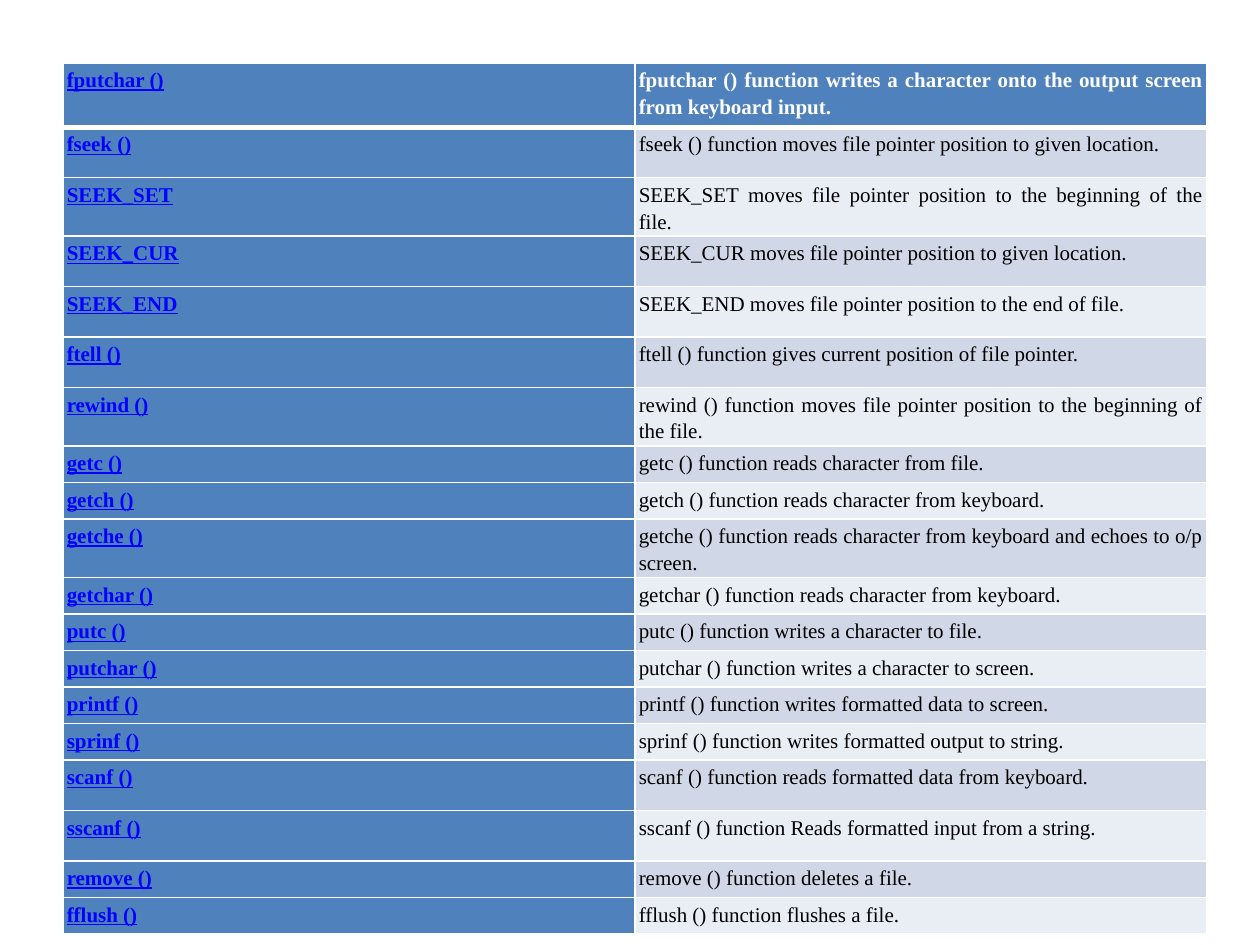
from typing import NamedTuple

from lxml.etree import SubElement
from pptx import Presentation
from pptx.dml.color import RGBColor
from pptx.enum.text import PP_ALIGN as Align
from pptx.oxml.ns import qn
from pptx.util import Pt

PX = 914400 // 200
FONT = "Times New Roman"
WHITE = RGBColor(0xFF, 0xFF, 0xFF)
BLACK = RGBColor(0x00, 0x00, 0x00)
LINK = RGBColor(0x00, 0x00, 0xFF)
BLUE = RGBColor(0x4F, 0x81, 0xBD)
BANDS = (RGBColor(0xE9, 0xED, 0xF4), RGBColor(0xD0, 0xD8, 0xE8))

LEFT, TOP, COL_W = 100, 100, 908
HEAD, TALL, SHORT = 102, 80, 58
INSET_X, INSET_Y = 6, 4


class Entry(NamedTuple):
    name: str
    text: str
    height: int = SHORT


ENTRIES = [
    Entry("fputchar ()", "fputchar () function writes a character onto the output screen from keyboard input.", HEAD),
    Entry("fseek ()", "fseek () function moves file pointer position to given location.", TALL),
    Entry("SEEK_SET", "SEEK_SET moves file pointer position to the beginning of the file.", TALL),
    Entry("SEEK_CUR", "SEEK_CUR moves file pointer position to given location.", TALL),
    Entry("SEEK_END", "SEEK_END moves file pointer position to the end of file.", TALL),
    Entry("ftell ()", "ftell () function gives current position of file pointer.", TALL),
    Entry("rewind ()", "rewind () function moves file pointer position to the beginning of the file.", TALL),
    Entry("getc ()", "getc () function reads character from file."),
    Entry("getch ()", "getch () function reads character from keyboard."),
    Entry("getche ()", "getche () function reads character from keyboard and echoes to o/p screen.", TALL),
    Entry("getchar ()", "getchar () function reads character from keyboard."),
    Entry("putc ()", "putc () function writes a character to file."),
    Entry("putchar ()", "putchar () function writes a character to screen."),
    Entry("printf ()", "printf () function writes formatted data to screen."),
    Entry("sprinf ()", "sprinf () function writes formatted output to string."),
    Entry("scanf ()", "scanf () function reads formatted data from keyboard.", TALL),
    Entry("sscanf ()", "sscanf () function Reads formatted input from a string.", TALL),
    Entry("remove ()", "remove () function deletes a file."),
    Entry("fflush ()", "fflush () function flushes a file."),
]


def set_borders(cell, top: int = 1, bottom: int = 1) -> None:
    tc_pr = cell._tc.get_or_add_tcPr()
    for side, width in (("L", 1), ("R", 1), ("T", top), ("B", bottom)):
        ln = SubElement(tc_pr, qn(f"a:ln{side}"), w=str(Pt(width)))
        fill = SubElement(ln, qn("a:solidFill"))
        SubElement(fill, qn("a:srgbClr"), val=str(WHITE))


def write(cell, text: str, *, color: RGBColor, bold: bool = False,
          underline: bool = False, align: Align = Align.LEFT) -> None:
    p = cell.text_frame.paragraphs[0]
    p.alignment = align
    p.line_spacing = 1.15
    r = p.add_run()
    r.text = text
    r.font.name = FONT
    r.font.size = Pt(12)
    r.font.bold = bold
    r.font.underline = underline
    r.font.color.rgb = color


def format_cell(cell, fill: RGBColor, row: int) -> None:
    cell.margin_left = cell.margin_right = INSET_X * PX
    cell.margin_top = cell.margin_bottom = INSET_Y * PX
    set_borders(cell, top=3 if row == 1 else 1, bottom=3 if row == 0 else 1)
    cell.fill.solid()
    cell.fill.fore_color.rgb = fill


def add_function_table(s, entries: list[Entry]) -> None:
    height = sum(e.height for e in entries)
    table = s.shapes.add_table(len(entries), 2, LEFT * PX, TOP * PX,
                               2 * COL_W * PX, height * PX).table
    table.first_col = True
    for col in table.columns:
        col.width = COL_W * PX
    for i, entry in enumerate(entries):
        head = i == 0
        table.rows[i].height = entry.height * PX
        name, text = table.cell(i, 0), table.cell(i, 1)
        format_cell(name, BLUE, i)
        format_cell(text, BLUE if head else BANDS[i % 2], i)
        write(name, entry.name, color=LINK, bold=True, underline=True)
        write(text, entry.text, color=WHITE if head else BLACK, bold=head,
              align=Align.JUSTIFY)


def main() -> None:
    prs = Presentation()
    prs.slide_width, prs.slide_height = 2000 * PX, 1500 * PX
    s = prs.slides.add_slide(prs.slide_layouts[6])
    add_function_table(s, ENTRIES)
    prs.save("out.pptx")


if __name__ == "__main__":
    main()
